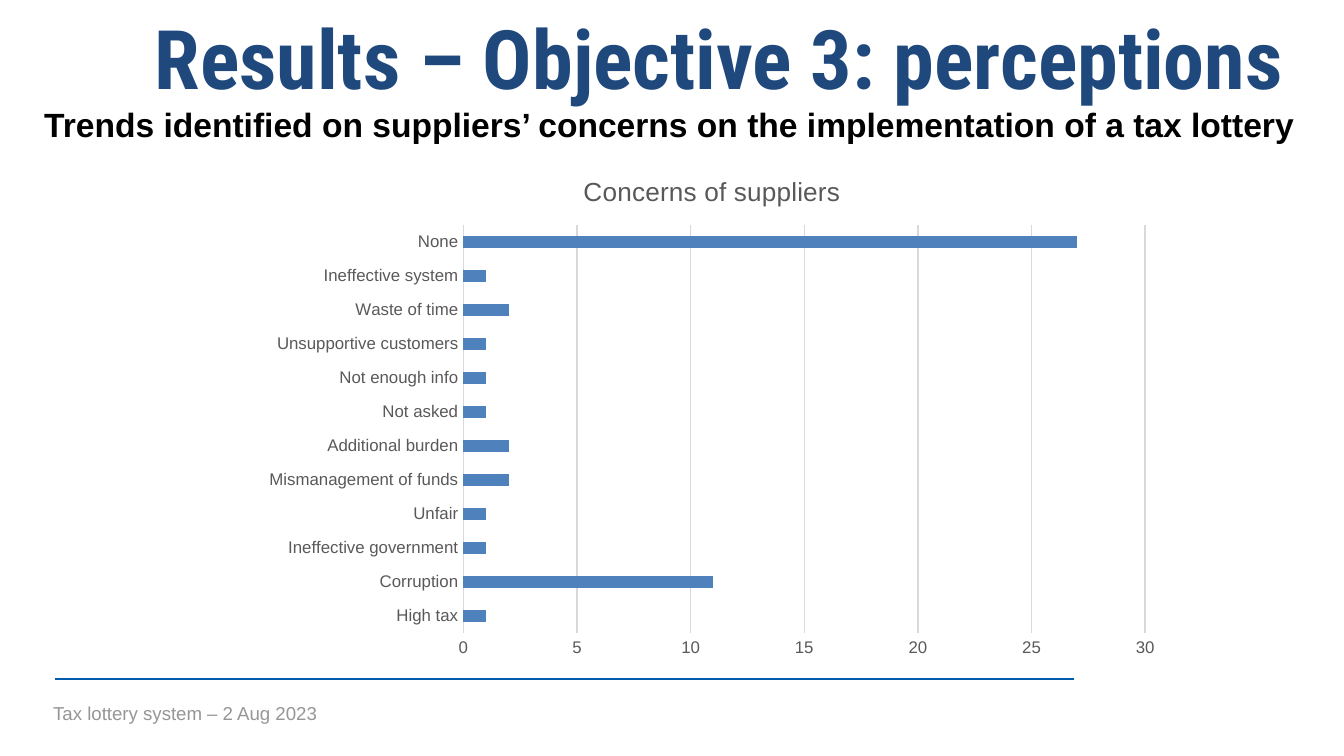
from lxml import etree
from pptx import Presentation
from pptx import util as u
from pptx.chart import data
from pptx.dml.color import RGBColor
from pptx.enum import chart as kinds, shapes, text
from pptx.oxml.ns import qn

COLORS = {"title": "1F497D", "body": "000000", "footer": "969696", "rule": "005BAA",
          "bar": "4F81BD", "label": "595959", "grid": "D9D9D9"}
SCALE = 914400 / 134.4


def px(*lengths):
    return [u.Emu(round(length * SCALE)) for length in lengths]


def style(font, size, color, name="Arial", bold=False):
    font.size = u.Pt(size)
    font.name = name
    font.bold = bold
    font.color.rgb = RGBColor.from_string(COLORS[color])


deck = Presentation()
deck.slide_width, deck.slide_height = px(1344, 756)
page = deck.slides.add_slide(deck.slide_layouts[5])

rule = page.shapes.add_connector(shapes.MSO_CONNECTOR.STRAIGHT, *px(55, 679, 1074, 679))
rule.line.color.rgb = RGBColor.from_string(COLORS["rule"])
rule.line.width = u.Pt(1)
etree.SubElement(rule._element.spPr, qn("a:effectLst"))

title = page.shapes.title
title.left, title.top, title.width, title.height = px(125, 4, 1189, 106)
frame = title.text_frame
frame.margin_left, frame.margin_right, frame.margin_top, frame.margin_bottom = px(7, 7, 3, 3)
subtitle = page.shapes.add_textbox(*px(31, 97, 1296, 54))
footer = page.shapes.add_textbox(*px(40, 695, 1034, 36))

align = text.PP_ALIGN
for box, words, size, color, name, bold, side, anchor in [
    (title, "Results – Objective 3: perceptions", 44, "title", "Roboto Condensed", True,
     align.CENTER, text.MSO_ANCHOR.MIDDLE),
    (subtitle, "Trends identified on suppliers’ concerns on the implementation of a tax lottery",
     18, "body", "Arial", True, align.JUSTIFY, text.MSO_ANCHOR.TOP),
    (footer, "Tax lottery system – 2 Aug 2023", 10, "footer", "Arial", False,
     align.LEFT, text.MSO_ANCHOR.TOP),
]:
    box.text_frame.word_wrap = True
    box.text_frame.auto_size = text.MSO_AUTO_SIZE.NONE
    box.text_frame.vertical_anchor = anchor
    para = box.text_frame.paragraphs[0]
    para.alignment = side
    span = para.add_run()
    span.text = words
    style(span.font, size, color, name, bold)

concerns = {
    "High tax": 1, "Corruption": 11, "Ineffective government": 1, "Unfair": 1,
    "Mismanagement of funds": 2, "Additional burden": 2, "Not asked": 1,
    "Not enough info": 1, "Unsupportive customers": 1, "Waste of time": 2,
    "Ineffective system": 1, "None": 27,
}
chart_data = data.CategoryChartData()
chart_data.categories = list(concerns)
chart_data.add_series("Series 1", list(concerns.values()))
chart = page.shapes.add_chart(
    kinds.XL_CHART_TYPE.BAR_CLUSTERED, *px(251, 152, 922, 516), chart_data).chart
style(chart.font, 10, "body", "Calibri")
chart.has_legend = False
chart.has_title = True
span = chart.chart_title.text_frame.paragraphs[0].add_run()
span.text = "Concerns of suppliers"
style(span.font, 14, "label")

plot = chart.plots[0]
plot.gap_width = 182
plot.vary_by_categories = False
fill = plot.series[0].format.fill
fill.solid()
fill.fore_color.rgb = RGBColor.from_string(COLORS["bar"])

categories, values = chart.category_axis, chart.value_axis
for axis in (categories, values):
    axis.major_tick_mark = kinds.XL_TICK_MARK.NONE
    axis.minor_tick_mark = kinds.XL_TICK_MARK.NONE
    style(axis.tick_labels.font, 9, "label")
values.minimum_scale, values.maximum_scale, values.major_unit = 0, 30, 5
values.has_major_gridlines = True
values.format.line.fill.background()
for line in (categories.format.line, values.major_gridlines.format.line):
    line.color.rgb = RGBColor.from_string(COLORS["grid"])
    line.width = u.Pt(0.75)

deck.save("out.pptx")
